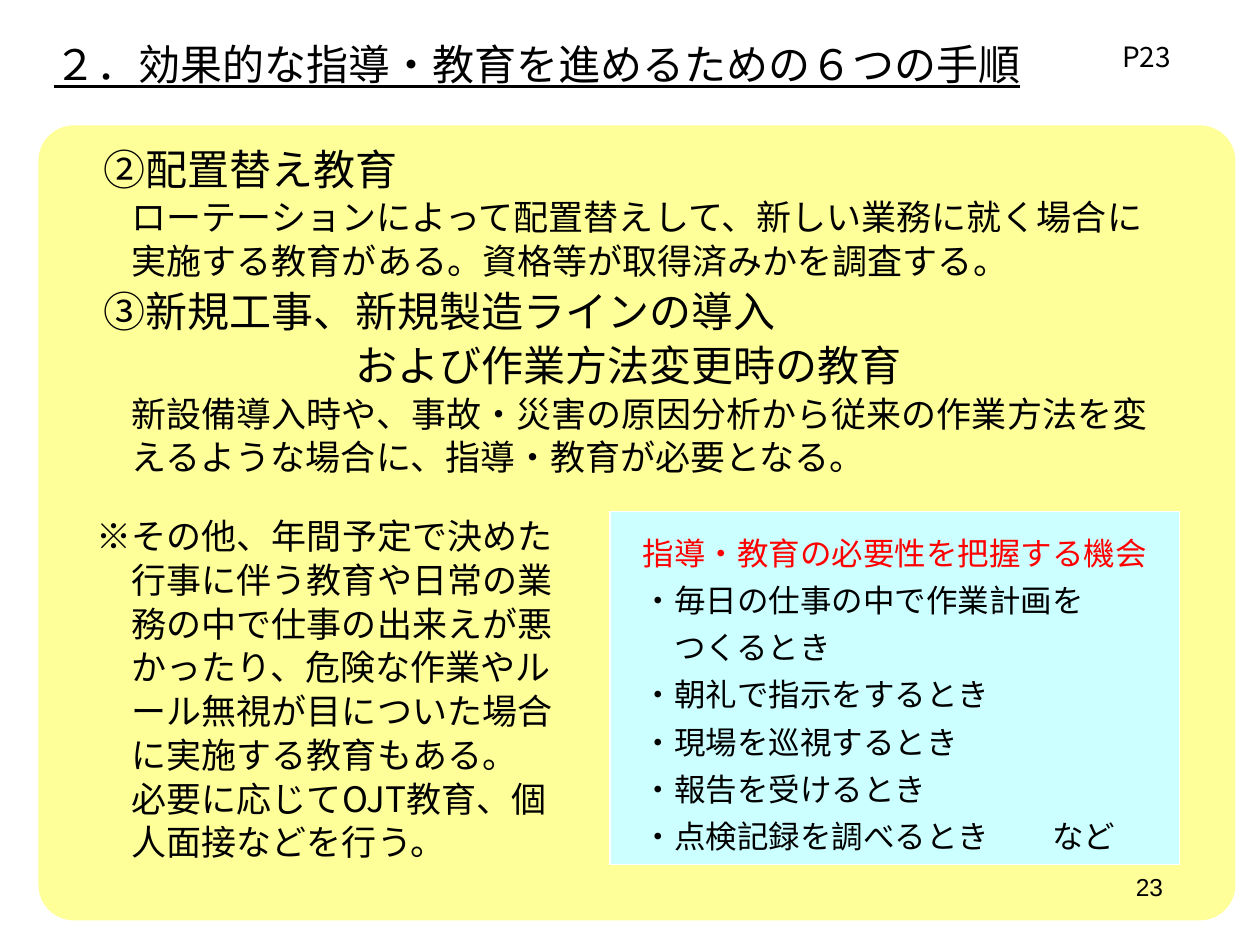
import pptx
import pptx.dml.color
import pptx.enum.shapes
import pptx.enum.text
import pptx.oxml
import pptx.oxml.ns
import pptx.util

JAPANESE_FONT = "Noto Sans CJK JP"
BLACK, RED, WHITE, YELLOW, CYAN = "000000", "FF0000", "FFFFFF", "FFFF99", "CCFFFF"
ALIGN = pptx.enum.text.PP_ALIGN
HEADING = {"size": 24, "spacing": 31, "indent": 24}
SUBHEADING = {**HEADING, "indent": 168}
BODY = {"size": 20, "spacing": 25, "indent": 40}
NOTE = {**BODY, "indent": 20, "before": 20}
CHANCE_TITLE = {"size": 18, "spacing": 35, "indent": 18, "color": RED}
CHANCE = {"size": 18, "spacing": 27, "indent": 18}
CHANCE_MORE = {**CHANCE, "indent": 36}

EDUCATION_LINES = [
    ("②配置替え教育", HEADING),
    ("ローテーションによって配置替えして、新しい業務に就く場合に", BODY),
    ("実施する教育がある。資格等が取得済みかを調査する。", BODY),
    ("③新規工事、新規製造ラインの導入", HEADING),
    ("および作業方法変更時の教育", SUBHEADING),
    ("新設備導入時や、事故・災害の原因分析から従来の作業方法を変", BODY),
    ("えるような場合に、指導・教育が必要となる。", BODY),
    ("※その他、年間予定で決めた", NOTE),
    ("行事に伴う教育や日常の業", BODY),
    ("務の中で仕事の出来えが悪", BODY),
    ("かったり、危険な作業やル", BODY),
    ("ール無視が目についた場合", BODY),
    ("に実施する教育もある。", BODY),
    ("必要に応じてOJT教育、個", BODY),
    ("人面接などを行う。", BODY),
]
CHANCE_LINES = [
    ("指導・教育の必要性を把握する機会", CHANCE_TITLE),
    ("・毎日の仕事の中で作業計画を", CHANCE),
    ("つくるとき", CHANCE_MORE),
    ("・朝礼で指示をするとき", CHANCE),
    ("・現場を巡視するとき", CHANCE),
    ("・報告を受けるとき", CHANCE),
    ("・点検記録を調べるとき　　など", CHANCE),
]


def color(value):
    """Turn a hex string into a colour."""
    return pptx.dml.color.RGBColor.from_string(value)


def inches(*lengths):
    """Turn lengths in inches into slide units."""
    return [pptx.util.Inches(length) for length in lengths]


def set_attributes(target, values):
    """Set every named attribute of the target."""
    for name, value in values.items():
        setattr(target, name, value)


def write_paragraph(paragraph, text, style):
    """Write one line of text in the given style."""
    run = paragraph.add_run()
    run.text = text
    font_name = style.get("font", JAPANESE_FONT)
    set_attributes(run.font, {
        "name": font_name,
        "size": pptx.util.Pt(style["size"]),
        "bold": False,
        "underline": style.get("underline", False),
    })
    run.font.color.rgb = color(style.get("color", BLACK))
    properties = run.font._element
    east_asian = pptx.oxml.parse_xml(
        f'<a:ea {pptx.oxml.ns.nsdecls("a")} typeface="{font_name}"/>')
    properties.find(pptx.oxml.ns.qn("a:latin")).addnext(east_asian)
    layout = {"alignment": style.get("align", ALIGN.LEFT),
              "space_before": pptx.util.Pt(style.get("before", 0))}
    if "spacing" in style:
        layout["line_spacing"] = pptx.util.Pt(style["spacing"])
    set_attributes(paragraph, layout)
    indent = pptx.util.Pt(style.get("indent", 0))
    paragraph._p.get_or_add_pPr().set("marL", str(indent))


def write_lines(frame, lines):
    """Fill a text frame with styled lines."""
    set_attributes(frame, {
        "word_wrap": True,
        "vertical_anchor": pptx.enum.text.MSO_ANCHOR.TOP,
    })
    for index, (text, style) in enumerate(lines):
        paragraph = frame.add_paragraph() if index else frame.paragraphs[0]
        write_paragraph(paragraph, text, style)


def add_title(slide, text, box):
    """Place and format the title placeholder."""
    title = slide.shapes.title
    set_attributes(title, dict(zip(("left", "top", "width", "height"), inches(*box))))
    title.text_frame.auto_size = pptx.enum.text.MSO_AUTO_SIZE.NONE
    write_lines(title.text_frame, [(text, {"size": 24, "spacing": 29, "underline": True})])


def add_label(slide, text, box, style):
    """Add a one-line text box."""
    label = slide.shapes.add_textbox(*inches(*box))
    write_lines(label.text_frame, [(text, style)])


def add_panel(slide, lines, box):
    """Add the rounded panel with its text."""
    panel = slide.shapes.add_shape(
        pptx.enum.shapes.MSO_SHAPE.ROUNDED_RECTANGLE, *inches(*box))
    panel.adjustments[0] = 0.044
    panel.shadow.inherit = False
    panel.fill.solid()
    panel.fill.fore_color.rgb = color(YELLOW)
    panel.line.color.rgb = color(YELLOW)
    panel.line.width = pptx.util.Pt(0.75)
    panel.text_frame.margin_top = pptx.util.Inches(0.03)
    write_lines(panel.text_frame, lines)


def set_borders(cell, value, width):
    """Draw all four borders of a cell."""
    properties = cell._tc.get_or_add_tcPr()
    for index, side in enumerate(("lnL", "lnR", "lnT", "lnB")):
        properties.insert(index, pptx.oxml.parse_xml(
            f'<a:{side} {pptx.oxml.ns.nsdecls("a")} w="{pptx.util.Pt(width)}">'
            f'<a:solidFill><a:srgbClr val="{value}"/></a:solidFill></a:{side}>'))


def add_chance_table(slide, lines, box):
    """Add the one-cell table of occasions."""
    table = slide.shapes.add_table(1, 1, *inches(*box)).table
    set_attributes(table, {"first_row": False, "horz_banding": False})
    cell = table.cell(0, 0)
    cell.fill.solid()
    cell.fill.fore_color.rgb = color(CYAN)
    margins = ("margin_left", "margin_top", "margin_right", "margin_bottom")
    set_attributes(cell, dict(zip(margins, inches(0.01, 0.01, 0.01, 0))))
    write_lines(cell.text_frame, lines)
    set_borders(cell, WHITE, 1)


def main():
    """Build and save the slide."""
    presentation = pptx.Presentation()
    width, height = inches(10, 7.5)
    set_attributes(presentation, {"slide_width": width, "slide_height": height})
    slide = presentation.slides.add_slide(presentation.slide_layouts[5])
    add_title(slide, "２．効果的な指導・教育を進めるための６つの手順", (0.33, 0.25, 8.14, 0.51))
    add_label(slide, "P23", (8.51, 0.25, 1.18, 0.38),
              {"size": 16, "spacing": 20, "align": ALIGN.CENTER})
    add_panel(slide, EDUCATION_LINES, (0.31, 1, 9.49, 6.3))
    add_label(slide, "23", (8.47, 6.87, 0.86, 0.42),
              {"size": 14, "font": "Arial", "align": ALIGN.RIGHT})
    add_chance_table(slide, CHANCE_LINES, (4.84, 4.06, 4.52, 2.8))
    presentation.save("out.pptx")


if __name__ == "__main__":
    main()
